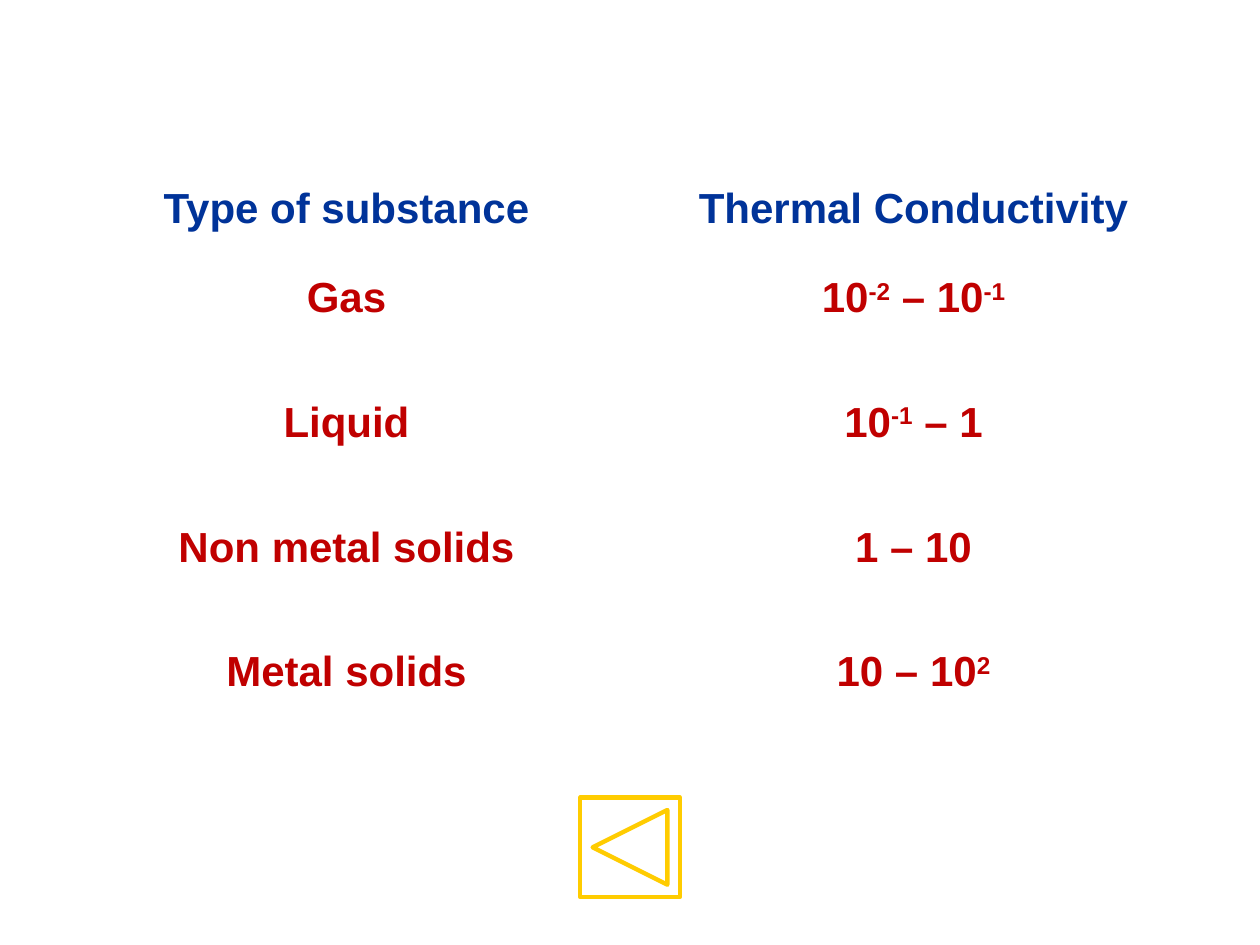
from lxml.etree import SubElement
from pptx import Presentation
from pptx.dml.color import RGBColor
from pptx.enum.shapes import MSO_SHAPE
from pptx.enum.text import PP_ALIGN
from pptx.oxml.ns import qn
from pptx.util import Inches, Pt

# Content: "^" separates normal text from superscript, in turn
HEADER = ("Type of substance", "Thermal Conductivity")
ROWS = [
    ("Gas", "10^-2^ – 10^-1"),
    ("Liquid", "10^-1^ – 1"),
    ("Non metal solids", "1 – 10"),
    ("Metal solids", "10 – 10^2"),
]

THEME = {
    "font": "Arial",
    "size": Pt(24),
    "header": RGBColor.from_string("003399"),
    "body": RGBColor.from_string("C00000"),
    "button": RGBColor.from_string("FFCC00"),
    "border": "FFFFFF",
    "inner": Pt(1),
    "outer": Pt(2.25),
}
HEADER_H, ROW_H = 0.71, 0.99
COL_W = 4.5
BUTTON = 0.79


def write_cell(cell, text, color):
    p = cell.text_frame.paragraphs[0]
    p.alignment = PP_ALIGN.CENTER
    p.font.name, p.font.size, p.font.bold = THEME["font"], THEME["size"], True
    p.font.color.rgb = color
    before = SubElement(p._p.get_or_add_pPr(), qn("a:spcBef"))
    SubElement(before, qn("a:spcPct"), val="20000")
    p._p.pPr.insert(0, before)
    for i, part in enumerate(text.split("^")):
        r = p.add_run()
        r.text = part
        if i % 2:
            r._r.get_or_add_rPr().set("baseline", "30000")


def set_borders(cell, outer_sides):
    tc_pr = cell._tc.get_or_add_tcPr()
    for side in "LRTB":
        width = THEME["outer" if side in outer_sides else "inner"]
        ln = SubElement(tc_pr, qn(f"a:ln{side}"), w=str(int(width)))
        fill = SubElement(ln, qn("a:solidFill"))
        SubElement(fill, qn("a:srgbClr"), val=THEME["border"])


prs = Presentation()
prs.slide_width, prs.slide_height = Inches(10), Inches(7.5)
slide = prs.slides.add_slide(prs.slide_layouts[6])

# Conductivity table
cells = [HEADER] + ROWS
n_rows, n_cols = len(cells), len(HEADER)
table = slide.shapes.add_table(
    n_rows, n_cols, Inches(0.5), Inches(1.42),
    Inches(n_cols * COL_W), Inches(HEADER_H + len(ROWS) * ROW_H)).table
table.first_row = table.horz_banding = False
for col in table.columns:
    col.width = Inches(COL_W)
for i, row in enumerate(cells):
    table.rows[i].height = Inches(ROW_H if i else HEADER_H)
    for j, text in enumerate(row):
        cell = table.cell(i, j)
        write_cell(cell, text, THEME["body" if i else "header"])
        edges = {"L": j == 0, "R": j == n_cols - 1, "T": i == 0, "B": i == n_rows - 1}
        set_borders(cell, [side for side, outer in edges.items() if outer])
        cell.fill.background()

# Back button, centred under the table
sp = slide.shapes.add_shape(
    MSO_SHAPE.ACTION_BUTTON_BACK_OR_PREVIOUS,
    Inches((10 - BUTTON) / 2), Inches(6.33), Inches(BUTTON), Inches(BUTTON))
sp.shadow.inherit = False
sp.fill.background()
sp.line.color.rgb = THEME["button"]
sp.line.width = Pt(2.5)

prs.save("out.pptx")
